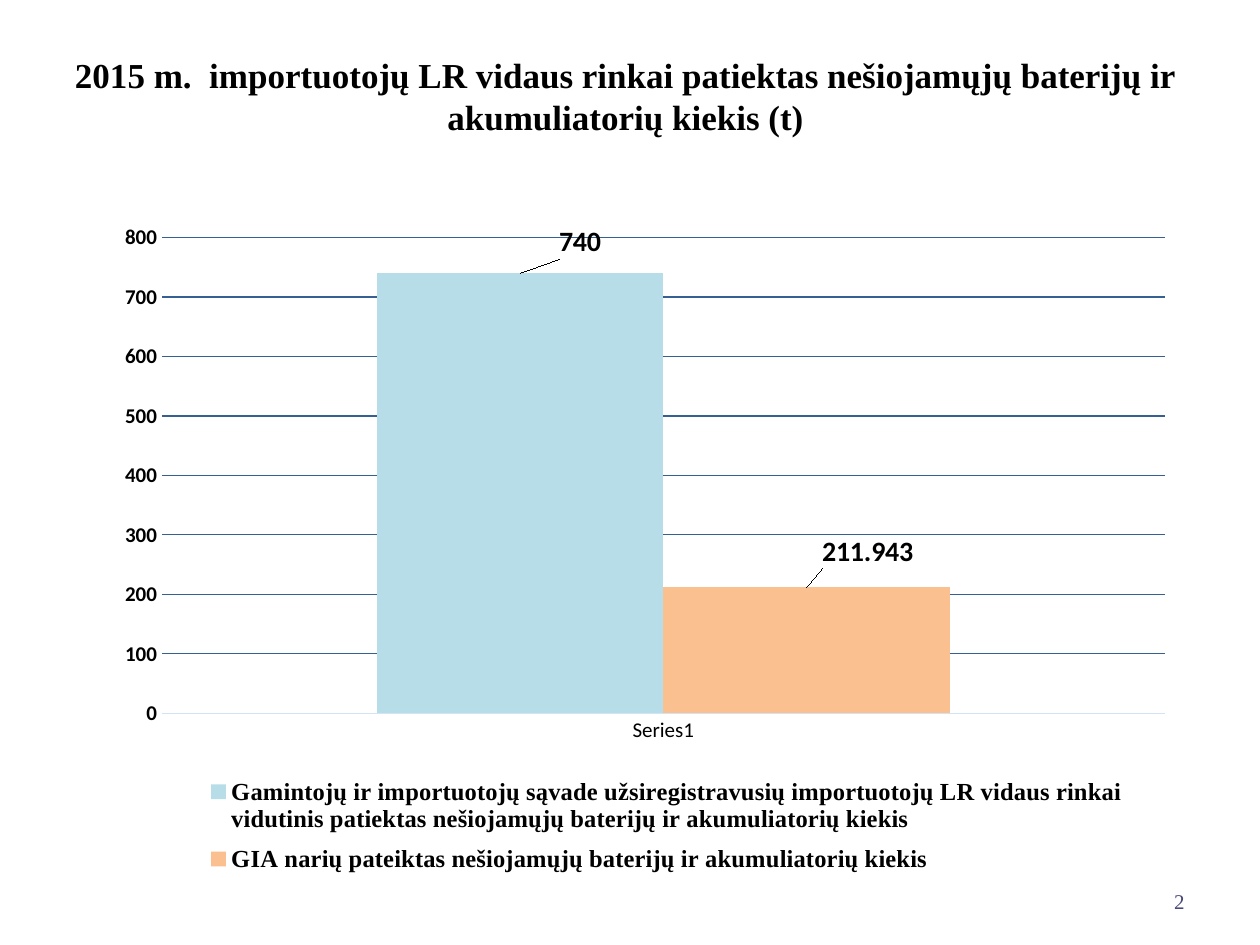
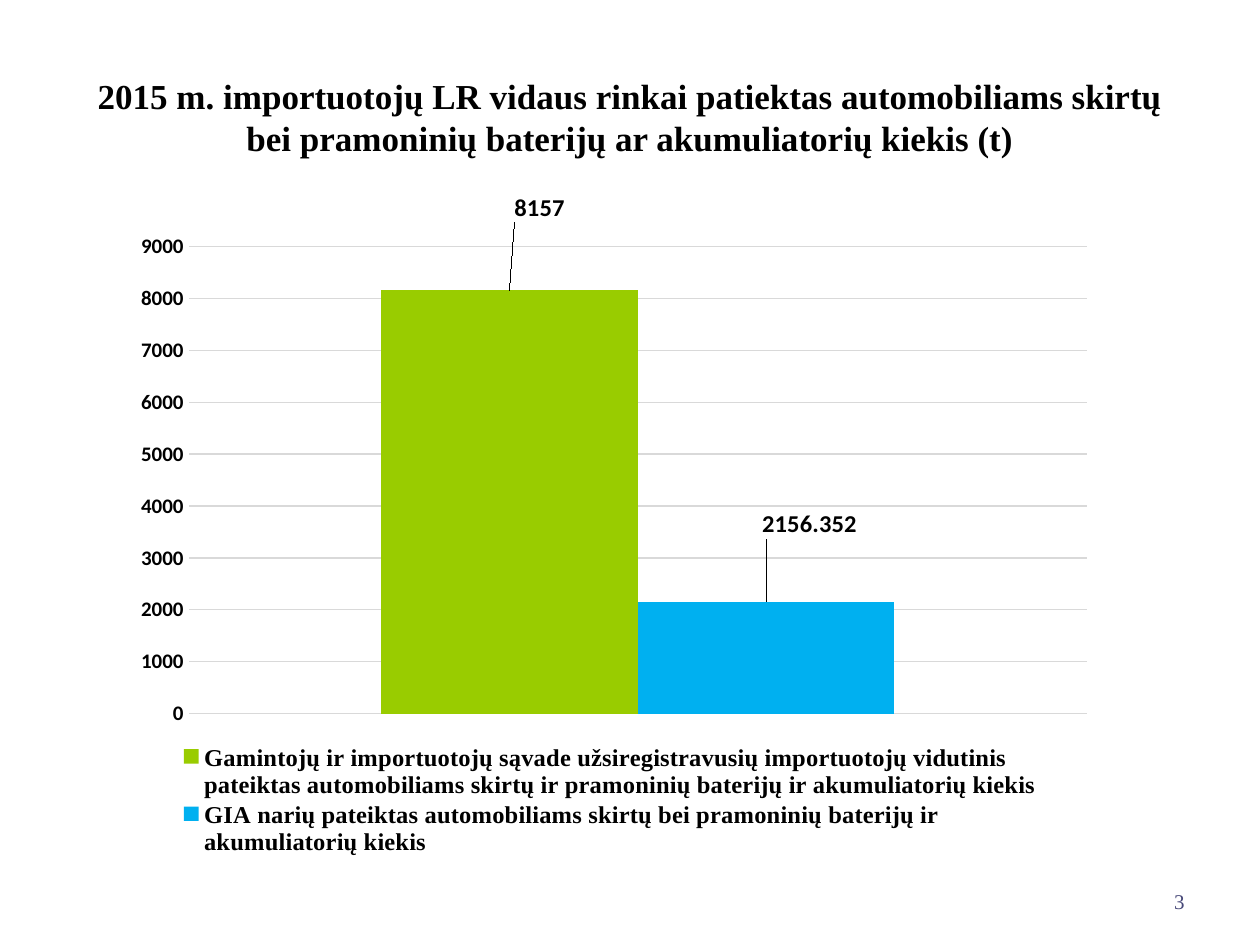
"""Build two slides of column charts on batteries supplied to the Lithuanian market."""
from lxml import etree
from pptx import Presentation
from pptx.chart.data import CategoryChartData
from pptx.dml.color import RGBColor
from pptx.enum.chart import XL_CHART_TYPE, XL_LABEL_POSITION, XL_LEGEND_POSITION, XL_TICK_MARK
from pptx.enum.text import MSO_ANCHOR, PP_ALIGN
from pptx.oxml.ns import qn
from pptx.util import Inches, Pt

COLUMNS = XL_CHART_TYPE.COLUMN_CLUSTERED
ABOVE_BAR = XL_LABEL_POSITION.OUTSIDE_END
BOTTOM = XL_LEGEND_POSITION.BOTTOM
NO_TICKS = XL_TICK_MARK.NONE
MIDDLE = MSO_ANCHOR.MIDDLE
CENTER, RIGHT = PP_ALIGN.CENTER, PP_ALIGN.RIGHT

BLACK = RGBColor(0x00, 0x00, 0x00)
NUMBER_COLOR = RGBColor(0x48, 0x49, 0x79)
AXIS_LINE = RGBColor(0xD4, 0xE3, 0xF4)
BLUE_GRID = RGBColor(0x37, 0x60, 0x92)
GREY_GRID = RGBColor(0xD9, 0xD9, 0xD9)
PALE_BLUE = RGBColor(0xB7, 0xDE, 0xE8)
PEACH = RGBColor(0xFA, 0xC0, 0x90)
GREEN = RGBColor(0x99, 0xCC, 0x00)
BLUE = RGBColor(0x00, 0xB0, 0xF0)
SERIF, SANS = "Times New Roman", "Calibri"

SLIDES = [
    {
        "number": 2,
        "title": "2015 m.  importuotojų LR vidaus rinkai patiektas nešiojamųjų baterijų ir "
                 "akumuliatorių kiekis (t)",
        "title_at": (0.43, 0.3, 9.07, 0.92),
        "chart_at": (0.75, 1.25, 8.5, 5.89),
        "plot_at": (0.064, 0.108, 0.937, 0.641),
        "legend_at": (0.1, 0.82, 0.87, 0.16),
        "category": "Series1",
        "show_category": True,
        "scale": (800, 100),
        "grid": BLUE_GRID,
        "label_size": 16,
        "series": [
            ("Gamintojų ir importuotojų sąvade užsiregistravusių importuotojų LR vidaus rinkai "
             "vidutinis patiektas nešiojamųjų baterijų ir akumuliatorių kiekis",
             740, PALE_BLUE, (0.056, -0.012)),
            ("GIA narių pateiktas nešiojamųjų baterijų ir akumuliatorių kiekis",
             211.943, PEACH, (0.057, -0.018)),
        ],
    },
    {
        "number": 3,
        "title": "2015 m. importuotojų LR vidaus rinkai patiektas automobiliams skirtų bei "
                 "pramoninių baterijų ar akumuliatorių kiekis (t)",
        "title_at": (0.5, 0.3, 9, 1.25),
        "chart_at": (0.83, 1.53, 8.03, 5.29),
        "plot_at": (0.083, 0.066, 0.888, 0.712),
        "legend_at": (0.07, 0.82, 0.86, 0.18),
        "category": "1",
        "show_category": False,
        "scale": (9000, 1000),
        "grid": GREY_GRID,
        "label_size": 14,
        "series": [
            ("Gamintojų ir importuotojų sąvade užsiregistravusių importuotojų vidutinis "
             "pateiktas automobiliams skirtų ir pramoninių baterijų ir akumuliatorių kiekis",
             8157, GREEN, (0.03, -0.096)),
            ("GIA narių pateiktas automobiliams skirtų bei pramoninių baterijų ir "
             "akumuliatorių kiekis",
             2156.352, BLUE, (0.043, -0.088)),
        ],
    },
]


def style_font(font, name, size, bold=False, color=BLACK):
    font.name, font.size, font.bold = name, Pt(size), bold
    font.color.rgb = color


def place_part(part, index, **settings):
    """Give a chart part a manual layout as its child at the index."""
    for old in part.findall(qn("c:layout")):
        part.remove(old)
    layout = etree.Element(qn("c:layout"))
    manual = etree.SubElement(layout, qn("c:manualLayout"))
    for name, value in settings.items():
        etree.SubElement(manual, qn(f"c:{name}")).set("val", str(value))
    part.insert(index, layout)


deck = Presentation()
deck.slide_width, deck.slide_height = Inches(10), Inches(7.5)
title_only = deck.slide_layouts[5]

for content in SLIDES:
    page = deck.slides.add_slide(title_only)

    title = page.shapes.title
    title.left, title.top, title.width, title.height = map(Inches, content["title_at"])
    title.text_frame.text = content["title"]
    title.text_frame.vertical_anchor = MIDDLE
    para = title.text_frame.paragraphs[0]
    para.alignment = CENTER
    style_font(para.font, SERIF, 20, True)

    box = page.shapes.add_textbox(Inches(7.17), Inches(6.95), Inches(2.33), Inches(0.4))
    box.text_frame.word_wrap = True
    box.text_frame.vertical_anchor = MIDDLE
    para = box.text_frame.paragraphs[0]
    para.text = str(content["number"])
    para.alignment = RIGHT
    style_font(para.font, SERIF, 12, color=NUMBER_COLOR)

    data = CategoryChartData()
    data.categories = [content["category"]]
    for name, value, _, _ in content["series"]:
        data.add_series(name, [value])
    chart = page.shapes.add_chart(COLUMNS, *map(Inches, content["chart_at"]), data).chart
    style_font(chart.font, SANS, 10)
    chart.has_title = False

    category_axis = chart.category_axis
    category_axis.visible = content["show_category"]
    category_axis.major_tick_mark = NO_TICKS
    category_axis.format.line.color.rgb = AXIS_LINE
    category_axis.format.line.width = Pt(0.75)
    style_font(category_axis.tick_labels.font, SANS, 12)

    value_axis = chart.value_axis
    value_axis.minimum_scale = 0
    value_axis.maximum_scale, value_axis.major_unit = content["scale"]
    value_axis.major_tick_mark = NO_TICKS
    value_axis.format.line.fill.background()
    value_axis.major_gridlines.format.line.color.rgb = content["grid"]
    value_axis.major_gridlines.format.line.width = Pt(0.75)
    style_font(value_axis.tick_labels.font, SANS, 12, True)

    chart.has_legend = True
    chart.legend.position = BOTTOM
    chart.legend.include_in_layout = False
    style_font(chart.legend.font, SERIF, 14, True)

    plot = chart.plots[0]
    plot.gap_width, plot.overlap = 150, 0
    plot.vary_by_categories = False
    for series, (_, _, color, _) in zip(plot.series, content["series"]):
        series.format.fill.solid()
        series.format.fill.fore_color.rgb = color
        label = series.points[0].data_label
        style_font(label.font, SANS, content["label_size"], True)
        label.position = ABOVE_BAR

    root = chart.element
    for label, (_, _, _, (dx, dy)) in zip(root.iter(qn("c:dLbl")), content["series"]):
        place_part(label, 1, x=dx, y=dy)
    x, y, w, h = content["plot_at"]
    place_part(next(root.iter(qn("c:plotArea"))), 0, layoutTarget="inner",
               xMode="edge", yMode="edge", x=x, y=y, w=w, h=h)
    x, y, w, h = content["legend_at"]
    place_part(next(root.iter(qn("c:legend"))), 1,
               xMode="edge", yMode="edge", x=x, y=y, w=w, h=h)

deck.save("out.pptx")
